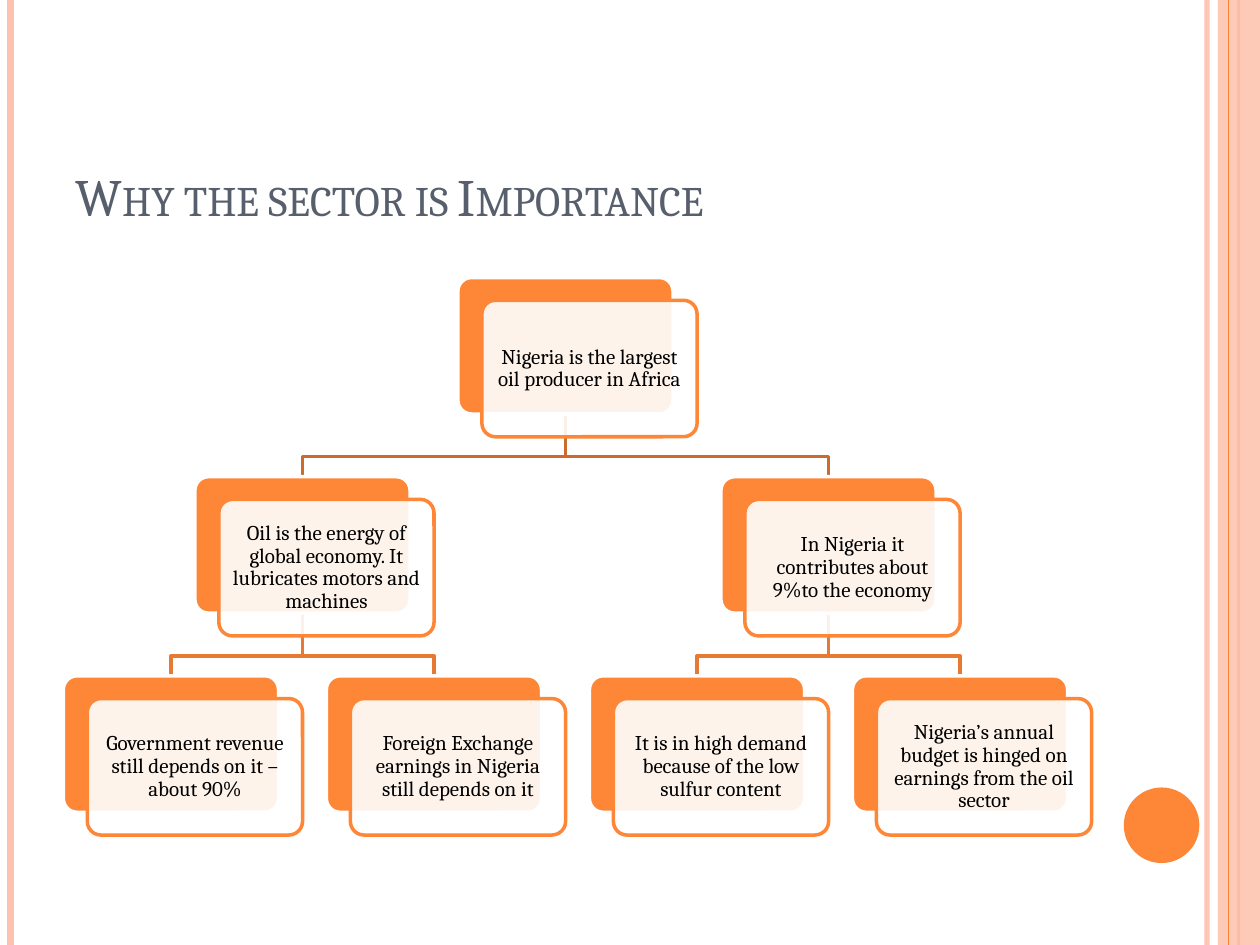
"""Build the slide: a title over a three-level tree of offset cards."""
from dataclasses import dataclass
from typing import Optional

from lxml.etree import SubElement
from pptx import Presentation
from pptx.dml.color import RGBColor
from pptx.enum.shapes import MSO_CONNECTOR as CONN, MSO_SHAPE as SHAPE
from pptx.enum.text import MSO_ANCHOR as ANCHOR, PP_ALIGN as ALIGN
from pptx.oxml.ns import qn
from pptx.util import Pt

WIDTH, HEIGHT = 720, 540
ORANGE, PINK, WHITE = "FE8637", "FEC3AE", "FFFFFF"
CARD_W, CARD_H = 123, 78
LEFT, TOP = 36.2, 158.6
COL_STEP, ROW_STEP = 150.3, 113.8
SHIFT_X, SHIFT_Y, TEXT_PAD = 13.7, 13, 2.3


@dataclass(frozen=True)
class Rule:
    x: float
    color: str
    width: float
    alpha: Optional[int] = None


@dataclass(frozen=True)
class Card:
    text: str
    col: float
    row: int
    parent: Optional["Card"] = None

    @property
    def x(self) -> float:
        return LEFT + self.col * COL_STEP

    @property
    def y(self) -> float:
        return TOP + self.row * ROW_STEP

    @property
    def center(self) -> float:
        return self.x + CARD_W / 2


BACK_RULES = [Rule(689.8, PINK, 3, 93), Rule(6, PINK, 4.5), Rule(707.8, ORANGE, 1.5)]
FRONT_RULE = Rule(702, ORANGE, 0.75)
BRANCH_COLORS = {1: "CB6B2C", 2: "E77A32"}

ROOT = Card("Nigeria is the largest oil producer in Africa", 1.5, 0)
ENERGY = Card("Oil is the energy of global economy. It lubricates motors and machines", 0.5, 1, ROOT)
ECONOMY = Card("In Nigeria it contributes about 9%to the economy", 2.5, 1, ROOT)
CARDS = [
    ROOT,
    ENERGY,
    Card("Government revenue still depends on it – about 90%", 0, 2, ENERGY),
    Card("Foreign Exchange earnings in Nigeria still depends on it", 1, 2, ENERGY),
    ECONOMY,
    Card("It is in high demand because of the low sulfur content", 2, 2, ECONOMY),
    Card("Nigeria’s annual budget is hinged on earnings from the oil sector", 3, 2, ECONOMY),
]


def rgb(color: str) -> RGBColor:
    """Turn a hex string into a colour."""
    return RGBColor.from_string(color)


def set_alpha(sp, alpha: int) -> None:
    """Make the first solid colour of a shape or line translucent."""
    clr = next(sp._element.spPr.iter(qn("a:srgbClr")))
    SubElement(clr, qn("a:alpha")).set("val", str(alpha * 1000))


def add_rule(shapes, rule: Rule) -> None:
    """Draw a full-height vertical line."""
    s = shapes.add_connector(CONN.STRAIGHT, Pt(rule.x), 0, Pt(rule.x), Pt(HEIGHT))
    s.line.color.rgb = rgb(rule.color)
    s.line.width = Pt(rule.width)
    if rule.alpha:
        set_alpha(s, rule.alpha)
    SubElement(s._element.spPr, qn("a:effectLst"))


def add_block(shapes, kind, x: float, y: float, w: float, h: float, fill: str,
              line: Optional[str] = None, alpha: Optional[int] = None):
    """Draw a filled shape, outlined if a line colour is given."""
    s = shapes.add_shape(kind, Pt(x), Pt(y), Pt(w), Pt(h))
    s.shadow.inherit = False
    s.fill.solid()
    s.fill.fore_color.rgb = rgb(fill)
    if alpha:
        set_alpha(s, alpha)
    if line:
        s.line.color.rgb = rgb(line)
        s.line.width = Pt(2)
    else:
        s.line.fill.background()
    return s


def add_text(shapes, text: str, x: float, y: float, w: float, h: float, size: float,
             color: str, frame: dict, para: dict):
    """Add a one-paragraph text box and return its run."""
    tf = shapes.add_textbox(Pt(x), Pt(y), Pt(w), Pt(h)).text_frame
    p = tf.paragraphs[0]
    r = p.add_run()
    r.text = text
    r.font.color.rgb = rgb(color)
    font = {"name": "Cambria", "size": Pt(size)}
    for obj, values in ((tf, {"word_wrap": True, **frame}), (p, para), (r.font, font)):
        for name, value in values.items():
            setattr(obj, name, value)
    return r


def add_branch(shapes, card: Card) -> None:
    """Draw the elbow line from a card's parent down to the card."""
    start, bend = card.parent.y + CARD_H, card.y - 11.4
    fb = shapes.build_freeform(Pt(card.parent.center), Pt(start))
    fb.add_line_segments([(Pt(card.parent.center), Pt(bend)), (Pt(card.center), Pt(bend)),
                          (Pt(card.center), Pt(card.y))], close=False)
    s = fb.convert_to_shape()
    s.shadow.inherit = False
    s.fill.background()
    s.line.color.rgb = rgb(BRANCH_COLORS[card.row])
    s.line.width = Pt(2)


def add_card(shapes, card: Card) -> None:
    """Draw a solid card, its translucent front and its text."""
    x, y = card.x + SHIFT_X, card.y + SHIFT_Y
    back = add_block(shapes, SHAPE.ROUNDED_RECTANGLE, card.x, card.y, CARD_W, CARD_H, ORANGE, WHITE)
    front = add_block(shapes, SHAPE.ROUNDED_RECTANGLE, x, y, CARD_W, CARD_H, WHITE, ORANGE, 90)
    for s in (back, front):
        s.adjustments[0] = 0.1
    frame = {f"margin_{side}": Pt(3.6) for side in ("left", "right", "top", "bottom")}
    add_text(shapes, card.text, x + TEXT_PAD, y + TEXT_PAD, CARD_W - 2 * TEXT_PAD,
             CARD_H - 2 * TEXT_PAD, 12, "000000", {**frame, "vertical_anchor": ANCHOR.MIDDLE},
             {"alignment": ALIGN.CENTER, "line_spacing": 0.9})


def main() -> None:
    """Assemble and save the slide."""
    prs = Presentation()
    prs.slide_width, prs.slide_height = Pt(WIDTH), Pt(HEIGHT)
    shapes = prs.slides.add_slide(prs.slide_layouts[6]).shapes
    for rule in BACK_RULES:
        add_rule(shapes, rule)
    add_block(shapes, SHAPE.RECTANGLE, 696, 0, 24, HEIGHT, PINK, alpha=87)
    add_rule(shapes, FRONT_RULE)
    add_block(shapes, SHAPE.OVAL, 642.2, 450, 43.2, 43.2, ORANGE)
    r = add_text(shapes, "Why the sector is Importance", 36, 21.6, 588, 111.6, 30, "575F6D",
                 {"vertical_anchor": ANCHOR.BOTTOM}, {"alignment": ALIGN.LEFT})
    r._r.get_or_add_rPr().set("cap", "small")
    for card in sorted((c for c in CARDS if c.parent), key=lambda c: -c.col):
        add_branch(shapes, card)
    for card in CARDS:
        add_card(shapes, card)
    prs.save("out.pptx")


if __name__ == "__main__":
    main()
